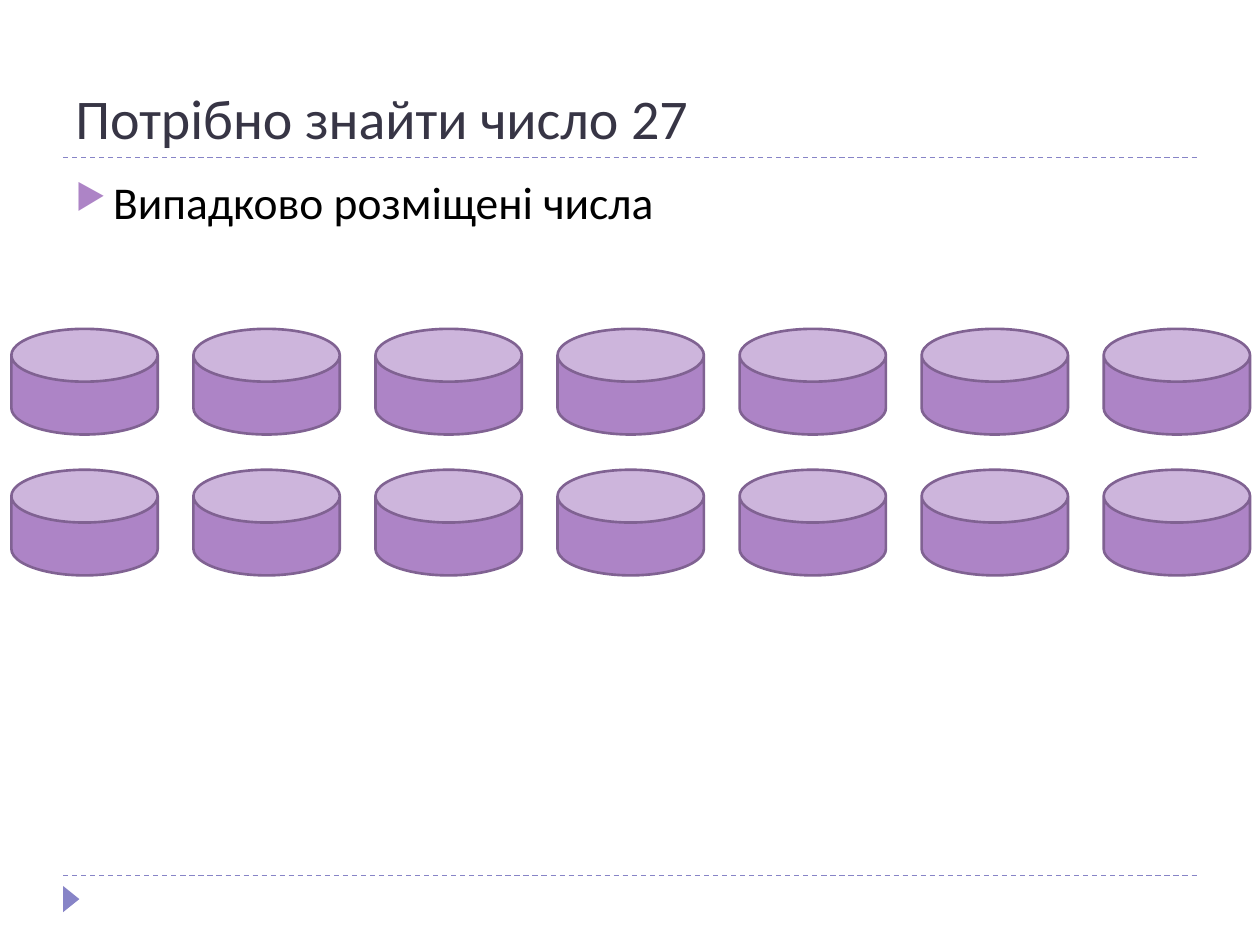
"""Build a slide with two rows of cylinders hiding randomly placed numbers."""
from dataclasses import dataclass

from lxml import etree
from pptx import Presentation
from pptx.dml.color import RGBColor
from pptx.enum.dml import MSO_LINE
from pptx.enum.shapes import MSO_CONNECTOR, MSO_SHAPE
from pptx.enum.text import MSO_ANCHOR
from pptx.oxml.ns import qn
from pptx.shapes.autoshape import Shape
from pptx.slide import Slide
from pptx.util import Cm, Pt

CAN = MSO_SHAPE.CAN
TRIANGLE = MSO_SHAPE.ISOSCELES_TRIANGLE
STRAIGHT = MSO_CONNECTOR.STRAIGHT
DASH = MSO_LINE.DASH
TOP = MSO_ANCHOR.TOP
BOTTOM = MSO_ANCHOR.BOTTOM

FONT = "Calibri"
BLUE = RGBColor(0x87, 0x84, 0xC7)
PURPLE = RGBColor(0xAD, 0x84, 0xC6)
DARK_PURPLE = RGBColor(0x80, 0x62, 0x92)
SLATE = RGBColor(0x37, 0x35, 0x45)
BLACK = RGBColor(0, 0, 0)

MARGIN = 1.27
CONTENT_WIDTH = 22.86
RULE_TOPS = (3.18, 17.65)


@dataclass(frozen=True)
class TextBlock:
    """Wording, place in centimetres and look of one line of text."""

    text: str
    top: float
    height: float
    size: int
    color: RGBColor
    anchor: MSO_ANCHOR


@dataclass(frozen=True)
class CanGrid:
    """Evenly spaced cylinders, measured in centimetres."""

    left: float
    top: float
    width: float
    height: float
    column_step: float
    row_step: float
    columns: int
    rows: int


TITLE = TextBlock("Потрібно знайти число 27", 0.43, 2.74, 32, SLATE, BOTTOM)
BODY = TextBlock("Випадково розміщені числа", 3.38, 2.57, 26, BLACK, TOP)
CANS = CanGrid(0.23, 6.63, 2.95, 2.13, 3.67, 2.84, columns=7, rows=2)


def add_rule(slide: Slide, top: float) -> None:
    """Draw a dashed line across the content width."""
    rule = slide.shapes.add_connector(
        STRAIGHT, Cm(MARGIN), Cm(top), Cm(MARGIN + CONTENT_WIDTH), Cm(top)
    )
    rule.line.color.rgb = BLUE
    rule.line.width = Pt(0.75)
    rule.line.dash_style = DASH
    etree.SubElement(rule._element.spPr, qn("a:effectLst"))


def add_marker(slide: Slide) -> None:
    """Draw the small footer triangle pointing right."""
    marker = slide.shapes.add_shape(TRIANGLE, Cm(1.17), Cm(17.96), Cm(0.53), Cm(0.33))
    marker.rotation = 90
    marker.shadow.inherit = False
    marker.fill.solid()
    marker.fill.fore_color.rgb = BLUE
    marker.line.fill.background()


def add_text(slide: Slide, block: TextBlock) -> Shape:
    """Place one formatted line of text."""
    box = slide.shapes.add_textbox(
        Cm(MARGIN), Cm(block.top), Cm(CONTENT_WIDTH), Cm(block.height)
    )
    frame = box.text_frame
    frame.word_wrap = True
    frame.vertical_anchor = block.anchor
    frame.text = block.text
    font = frame.paragraphs[0].runs[0].font
    font.name = FONT
    font.size = Pt(block.size)
    font.color.rgb = block.color
    return box


def add_bullet(box: Shape) -> None:
    """Give the first paragraph a hanging triangular bullet."""
    paragraph = box.text_frame.paragraphs[0]
    paragraph.space_before = Pt(6)
    properties = paragraph._p.get_or_add_pPr()
    properties.set("marL", str(Cm(0.76)))
    properties.set("indent", str(-Cm(0.76)))
    color = etree.SubElement(properties, qn("a:buClr"))
    etree.SubElement(color, qn("a:srgbClr"), val=str(PURPLE))
    etree.SubElement(properties, qn("a:buSzPct"), val="76000")
    etree.SubElement(properties, qn("a:buChar"), char="▶")


def add_cans(slide: Slide, grid: CanGrid) -> None:
    """Draw the cylinders row by row."""
    for row in range(grid.rows):
        for column in range(grid.columns):
            can = slide.shapes.add_shape(
                CAN,
                Cm(grid.left + column * grid.column_step),
                Cm(grid.top + row * grid.row_step),
                Cm(grid.width),
                Cm(grid.height),
            )
            can.adjustments[0] = 0.5
            can.shadow.inherit = False
            can.fill.solid()
            can.fill.fore_color.rgb = PURPLE
            can.line.color.rgb = DARK_PURPLE
            can.line.width = Pt(1.5)


def main() -> None:
    """Assemble and save the deck."""
    deck = Presentation()
    deck.slide_width = Cm(25.4)
    deck.slide_height = Cm(19.05)
    slide = deck.slides.add_slide(deck.slide_layouts[6])
    for top in RULE_TOPS:
        add_rule(slide, top)
    add_marker(slide)
    add_text(slide, TITLE)
    add_bullet(add_text(slide, BODY))
    add_cans(slide, CANS)
    deck.save("out.pptx")


if __name__ == "__main__":
    main()
